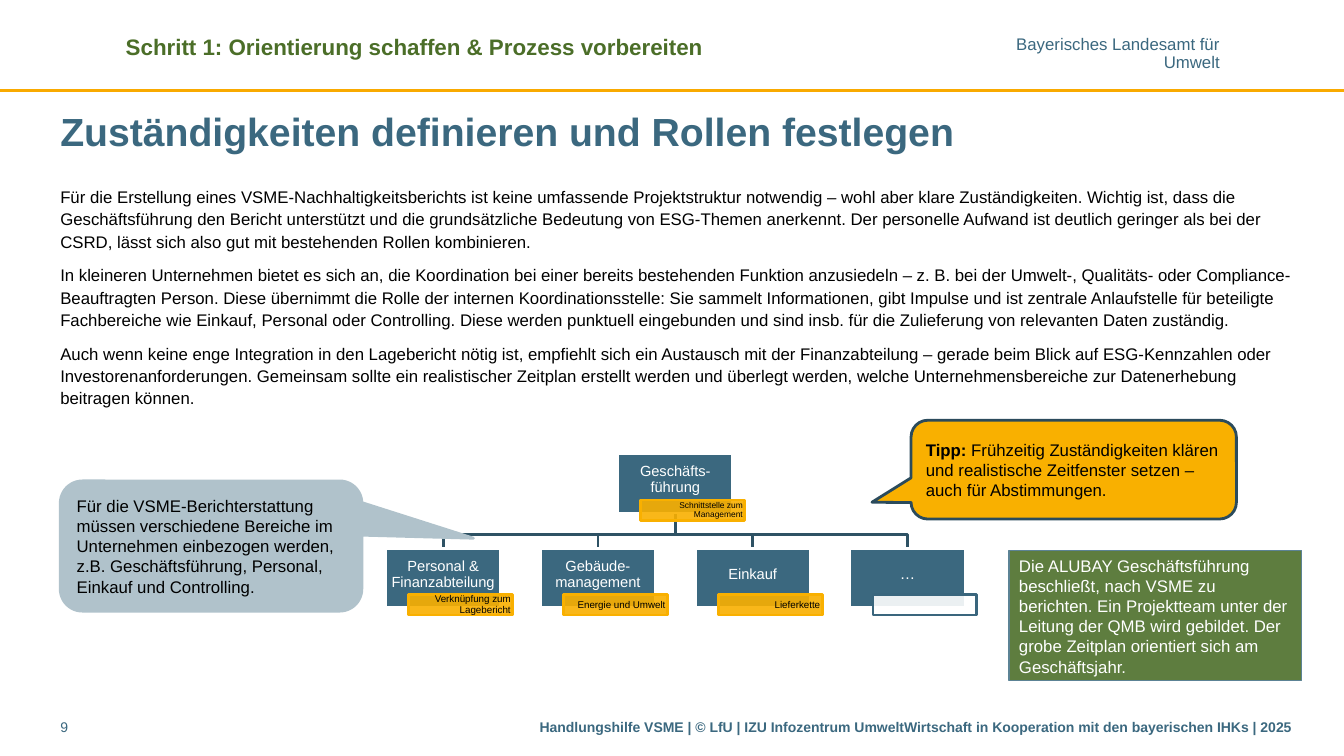
from pptx import Presentation
from pptx.dml.color import RGBColor
from pptx.enum.shapes import MSO_CONNECTOR, MSO_SHAPE
from pptx.enum.text import MSO_ANCHOR, PP_ALIGN
from pptx.oxml.ns import qn
from pptx.util import Cm, Pt
from lxml import etree

LEFT, CENTER, RIGHT = PP_ALIGN.LEFT, PP_ALIGN.CENTER, PP_ALIGN.RIGHT
TOP, MIDDLE = MSO_ANCHOR.TOP, MSO_ANCHOR.MIDDLE
RECT, CALLOUT = MSO_SHAPE.RECTANGLE, MSO_SHAPE.ROUNDED_RECTANGULAR_CALLOUT
STRAIGHT = MSO_CONNECTOR.STRAIGHT

FONT = "Arial"
COLORS = {
    "blue": "3B687F", "tree": "2E5264", "frame": "3A667D", "navy": "2B4B5C",
    "mist": "B0C2CB", "amber": "F9B000", "rule": "F9AA00", "leaf": "4B6E28",
    "green": "5E7D3F", "steel": "5C8395", "white": "FFFFFF", "black": "000000",
}
MARGIN, CONTENT_WIDTH = 1.52, 31.27
FLAT = (0, 0.13, 0, 0.13)
PADDED = (0.25, 0.13, 0.25, 0.13)

PARAGRAPHS = [
    "Für die Erstellung eines VSME-Nachhaltigkeitsberichts ist keine umfassende Projektstruktur "
    "notwendig – wohl aber klare Zuständigkeiten. Wichtig ist, dass die Geschäftsführung den Bericht "
    "unterstützt und die grundsätzliche Bedeutung von ESG-Themen anerkennt. Der personelle Aufwand ist "
    "deutlich geringer als bei der CSRD, lässt sich also gut mit bestehenden Rollen kombinieren.",
    "In kleineren Unternehmen bietet es sich an, die Koordination bei einer bereits bestehenden Funktion "
    "anzusiedeln – z. B. bei der Umwelt-, Qualitäts- oder Compliance-Beauftragten Person. Diese übernimmt "
    "die Rolle der internen Koordinationsstelle: Sie sammelt Informationen, gibt Impulse und ist zentrale "
    "Anlaufstelle für beteiligte Fachbereiche wie Einkauf, Personal oder Controlling. Diese werden "
    "punktuell eingebunden und sind insb. für die Zulieferung von relevanten Daten zuständig.",
    "Auch wenn keine enge Integration in den Lagebericht nötig ist, empfiehlt sich ein Austausch mit der "
    "Finanzabteilung – gerade beim Blick auf ESG-Kennzahlen oder Investorenanforderungen. Gemeinsam "
    "sollte ein realistischer Zeitplan erstellt werden und überlegt werden, welche Unternehmensbereiche "
    "zur Datenerhebung beitragen können.",
]
# Role, role size, tag, tag size
MANAGEMENT = ("Geschäfts-führung", 10.5, "Schnittstelle zum Management", 6)
DEPARTMENTS = [
    ("Personal & Finanzabteilung", 10.5, "Verknüpfung zum Lagebericht", 7),
    ("Gebäude-management", 10.5, "Energie und Umwelt", 7),
    ("Einkauf", 10.5, "Lieferkette", 7),
    ("…", 11, "", 7),
]


def rgb(name):
    return RGBColor.from_string(COLORS[name])


def write(shape, paragraphs, size, color, bold=False, align=LEFT, anchor=TOP,
          insets=PADDED, spacing=None, before=0):
    """Each paragraph is a string or a list of (text, bold) runs."""
    frame = shape.text_frame
    frame.word_wrap = True
    frame.vertical_anchor = anchor
    (frame.margin_left, frame.margin_top,
     frame.margin_right, frame.margin_bottom) = map(Cm, insets)
    for index, content in enumerate(paragraphs):
        paragraph = frame.add_paragraph() if index else frame.paragraphs[0]
        paragraph.alignment = align
        if spacing:
            paragraph.line_spacing = spacing
        if index and before:
            paragraph.space_before = Pt(before)
        runs = [(content, bold)] if isinstance(content, str) else content
        for text, is_bold in runs:
            run = paragraph.add_run()
            run.text = text
            run.font.name, run.font.size, run.font.bold = FONT, Pt(size), is_bold
            run.font.color.rgb = rgb(color)


def add_text(slide, box, paragraphs, size, color, **style):
    write(slide.shapes.add_textbox(*map(Cm, box)), paragraphs, size, color, **style)


def add_box(slide, kind, box, fill, line, width=2):
    shape = slide.shapes.add_shape(kind, *map(Cm, box))
    shape.shadow.inherit = False
    shape.fill.solid()
    shape.fill.fore_color.rgb = rgb(fill)
    shape.line.color.rgb = rgb(line)
    shape.line.width = Pt(width)
    return shape


def add_header(slide, left, top, width, height):
    bottom = Cm(top + height)
    rule = slide.shapes.add_connector(STRAIGHT, Cm(left), bottom, Cm(left + width), bottom)
    rule.line.color.rgb = rgb("rule")
    rule.line.width = Pt(2)
    etree.SubElement(rule._element.spPr, qn("a:effectLst"))
    add_text(slide, (left + 25.2, top + 0.94, 5.54, 0.86),
             ["Bayerisches Landesamt für", "Umwelt"], 12, "blue",
             align=RIGHT, insets=(0, 0, 0, 0), spacing=0.85)
    add_text(slide, (left + 2.92, top + 0.71, 16, 1.63),
             ["Schritt 1: Orientierung schaffen & Prozess vorbereiten"], 16, "leaf", bold=True)


def add_role(slide, left, top, width, height, role, tag_fill="amber", tag_line="amber"):
    name, name_size, tag, tag_size = role
    role_box = add_box(slide, RECT, (left, top, width, height), "blue", "white")
    write(role_box, [name], name_size, "white", align=CENTER, anchor=MIDDLE,
          insets=(0.03, 0.03, 0.03, 0.2), spacing=0.9)
    tag_box = add_box(slide, RECT, (left + 0.2 * width, top + 0.78 * height, 2.62, 0.51),
                      tag_fill, tag_line)
    fill_color = tag_box.fill._xPr.find(qn("a:solidFill"))[0]
    etree.SubElement(fill_color, qn("a:alpha")).set("val", "90000")
    if tag:
        write(tag_box, [tag], tag_size, "black", align=RIGHT, anchor=MIDDLE,
              insets=(0.05, 0, 0.05, 0), spacing=0.9)


def add_org_chart(slide, left, top, width, height):
    role_width, role_height = 2.9, 1.5
    step = (width - role_width) / (len(DEPARTMENTS) - 1)
    lefts = [left + i * step for i in range(len(DEPARTMENTS))]
    department_top = top + height - role_height
    root_x, root_bottom = left + width / 2, top + role_height
    branch_y = department_top - 0.36
    # Branches lie behind the boxes
    for department_left in lefts:
        x = department_left + role_width / 2
        builder = slide.shapes.build_freeform(Cm(root_x), Cm(root_bottom))
        builder.add_line_segments(
            [(Cm(root_x), Cm(branch_y)), (Cm(x), Cm(branch_y)), (Cm(x), Cm(department_top))],
            close=False)
        branch = builder.convert_to_shape()
        branch.shadow.inherit = False
        branch.fill.background()
        branch.line.color.rgb = rgb("tree")
        branch.line.width = Pt(2)
    add_role(slide, root_x - role_width / 2, top, role_width, role_height, MANAGEMENT)
    for department_left, role in zip(lefts, DEPARTMENTS):
        tag_colors = ("amber", "amber") if role[2] else ("white", "frame")
        add_role(slide, department_left, department_top, role_width, role_height,
                 role, *tag_colors)


def add_callout(slide, box, paragraph, fill, line, pointer):
    callout = add_box(slide, CALLOUT, box, fill, line)
    callout.adjustments[0], callout.adjustments[1] = pointer
    callout.adjustments[2] = 0.17
    write(callout, [paragraph], 12, "black", anchor=MIDDLE)


def add_example(slide, *box):
    example = add_box(slide, RECT, box, "green", "steel", 1)
    write(example, [
        "Die ALUBAY Geschäftsführung beschließt, nach VSME zu berichten. Ein Projektteam unter der "
        "Leitung der QMB wird gebildet. Der grobe Zeitplan orientiert sich am Geschäftsjahr."],
        12, "white")


def add_footer(slide, left, top, width, height):
    add_text(slide, (left, top, 1.78, height), ["9"], 10, "blue", insets=FLAT)
    add_text(slide, (left + 11.6, top, width - 11.6, height),
             ["Handlungshilfe VSME | © LfU | IZU Infozentrum UmweltWirtschaft in Kooperation "
              "mit den bayerischen IHKs | 2025"], 10, "blue", bold=True, align=RIGHT)


def main():
    prs = Presentation()
    prs.slide_width, prs.slide_height = Cm(33.87), Cm(19.05)
    slide = prs.slides.add_slide(prs.slide_layouts[6])

    add_header(slide, 0, 0, 33.87, 2.29)
    add_org_chart(slide, 9.72, 11.43, 14.6, 3.89)
    # Title and body
    add_text(slide, (MARGIN, 2.59, CONTENT_WIDTH, 1.4),
             ["Zuständigkeiten definieren und Rollen festlegen"], 28, "blue",
             bold=True, anchor=MIDDLE, insets=FLAT)
    add_text(slide, (MARGIN, 4.52, CONTENT_WIDTH, 13.06), PARAGRAPHS, 12, "black",
             insets=FLAT, spacing=Pt(16), before=8)
    add_footer(slide, MARGIN, 17.98, CONTENT_WIDTH, 0.79)
    # Callouts and example
    add_callout(slide, (MARGIN, 12.12, 7.6, 3.28),
                "Für die VSME-Berichterstattung müssen verschiedene Bereiche im Unternehmen "
                "einbezogen werden, z.B. Geschäftsführung, Personal, Einkauf und Controlling.",
                "mist", "mist", (0.87, -0.06))
    add_callout(slide, (22.96, 10.59, 8.2, 2.49),
                [("Tipp: ", True),
                 ("Frühzeitig Zuständigkeiten klären und realistische Zeitfenster setzen – "
                  "auch für Abstimmungen.", False)],
                "amber", "navy", (-0.62, 0.33))
    add_example(slide, 25.43, 13.87, 7.37, 3.28)
    prs.save("out.pptx")


if __name__ == "__main__":
    main()
